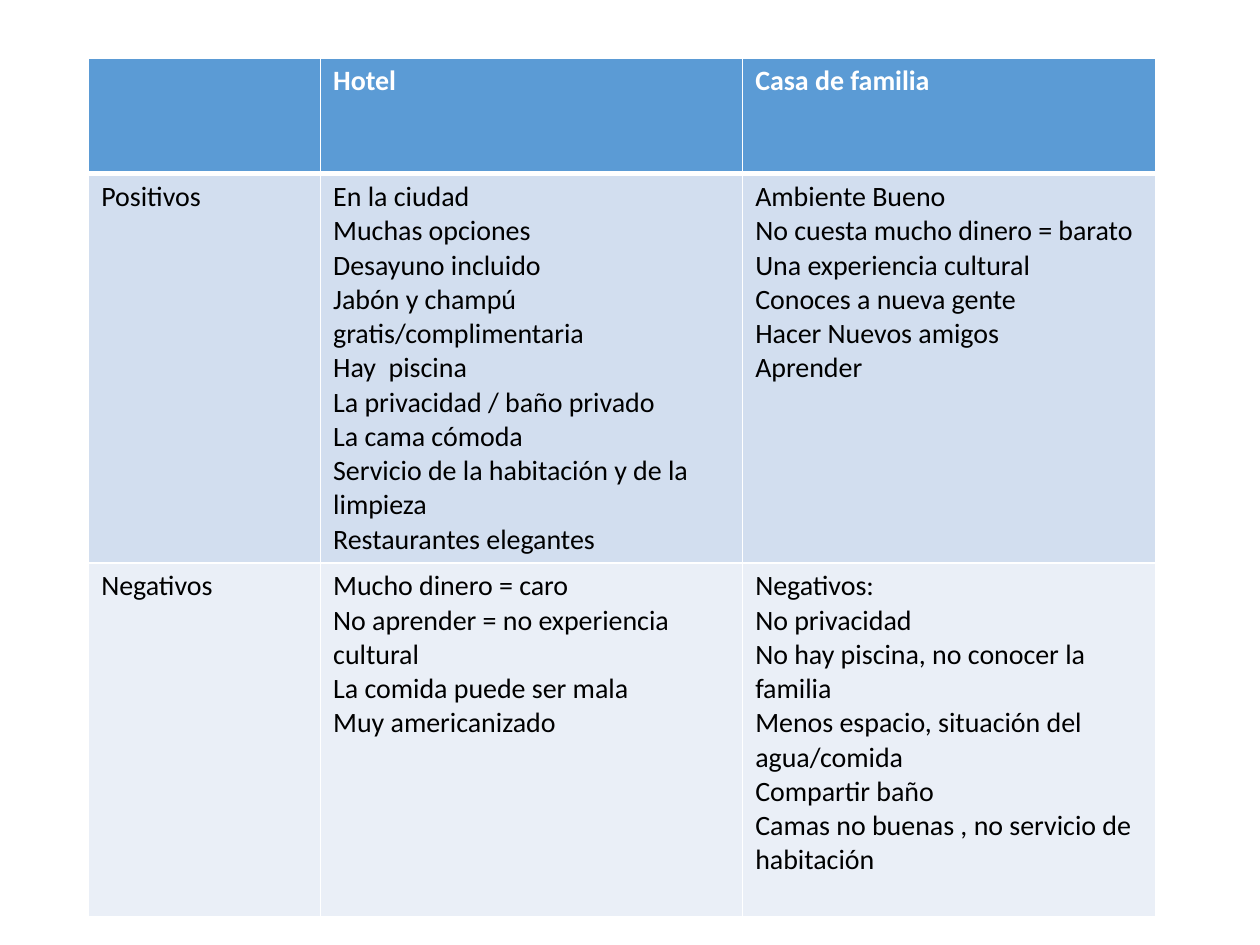
from lxml.etree import SubElement
from pptx import Presentation
from pptx.dml.color import RGBColor
from pptx.oxml.ns import qn
from pptx.util import Pt

WHITE = RGBColor(0xFF, 0xFF, 0xFF)
BLACK = RGBColor(0x00, 0x00, 0x00)
BLUE = RGBColor(0x5B, 0x9B, 0xD5)
LIGHT_BLUE = RGBColor(0xD2, 0xDE, 0xEF)
PALE_BLUE = RGBColor(0xEA, 0xEF, 0xF7)

LEFT, TOP = 50.7, 33.1
COLUMN_WIDTHS = [132.5, 241.2, 236.2]
ROW_HEIGHTS = [66.2, 222.3, 202.3]
ROW_FILLS = [BLUE, LIGHT_BLUE, PALE_BLUE]
THIN, THICK = 1, 3

ROWS = [
    [[], ["Hotel"], ["Casa de familia"]],
    [
        ["Positivos"],
        [
            "En la ciudad",
            "Muchas opciones",
            "Desayuno incluido",
            "Jabón y champú gratis/complimentaria",
            "Hay  piscina",
            "La privacidad / baño privado",
            "La cama cómoda",
            "Servicio de la habitación y de la limpieza",
            "Restaurantes elegantes",
        ],
        [
            "Ambiente Bueno",
            "No cuesta mucho dinero = barato",
            "Una experiencia cultural",
            "Conoces a nueva gente",
            "Hacer Nuevos amigos",
            "Aprender",
        ],
    ],
    [
        ["Negativos"],
        [
            "Mucho dinero = caro",
            "No aprender = no experiencia cultural",
            "La comida puede ser mala",
            "Muy americanizado",
        ],
        [
            "Negativos:",
            "No privacidad",
            "No hay piscina, no conocer la familia",
            "Menos espacio, situación del agua/comida",
            "Compartir baño",
            "Camas no buenas , no servicio de habitación",
        ],
    ],
]


def set_borders(cell, widths):
    properties = cell._tc.get_or_add_tcPr()
    for side, width in widths.items():
        line = SubElement(properties, qn(f"a:ln{side}"), w=str(Pt(width)))
        fill = SubElement(line, qn("a:solidFill"))
        SubElement(fill, qn("a:srgbClr"), val=str(WHITE))


def write_lines(cell, lines, font_format):
    cell.text = "\n".join(lines)
    for paragraph in cell.text_frame.paragraphs:
        for name, value in font_format.items():
            setattr(paragraph.font, name, value)
            for run in paragraph.runs:
                setattr(run.font, name, value)
        for run in paragraph.runs:
            run.font.color.rgb = WHITE if font_format["bold"] else BLACK


def main():
    presentation = Presentation()
    presentation.slide_width, presentation.slide_height = Pt(720), Pt(540)
    slide = presentation.slides.add_slide(presentation.slide_layouts[6])
    table = slide.shapes.add_table(
        len(ROWS), len(COLUMN_WIDTHS), Pt(LEFT), Pt(TOP),
        Pt(sum(COLUMN_WIDTHS)), Pt(sum(ROW_HEIGHTS)),
    ).table
    for column, width in zip(table.columns, COLUMN_WIDTHS):
        column.width = Pt(width)
    for row_index, cells in enumerate(ROWS):
        table.rows[row_index].height = Pt(ROW_HEIGHTS[row_index])
        is_header = row_index == 0
        font_format = {"name": "Calibri", "size": Pt(16), "bold": is_header}
        borders = {
            "L": THIN,
            "R": THIN,
            "T": THICK if row_index == 1 else THIN,
            "B": THICK if is_header else THIN,
        }
        for column_index, lines in enumerate(cells):
            cell = table.cell(row_index, column_index)
            set_borders(cell, borders)
            cell.fill.solid()
            cell.fill.fore_color.rgb = ROW_FILLS[row_index]
            write_lines(cell, lines, font_format)
    presentation.save("out.pptx")


if __name__ == "__main__":
    main()
